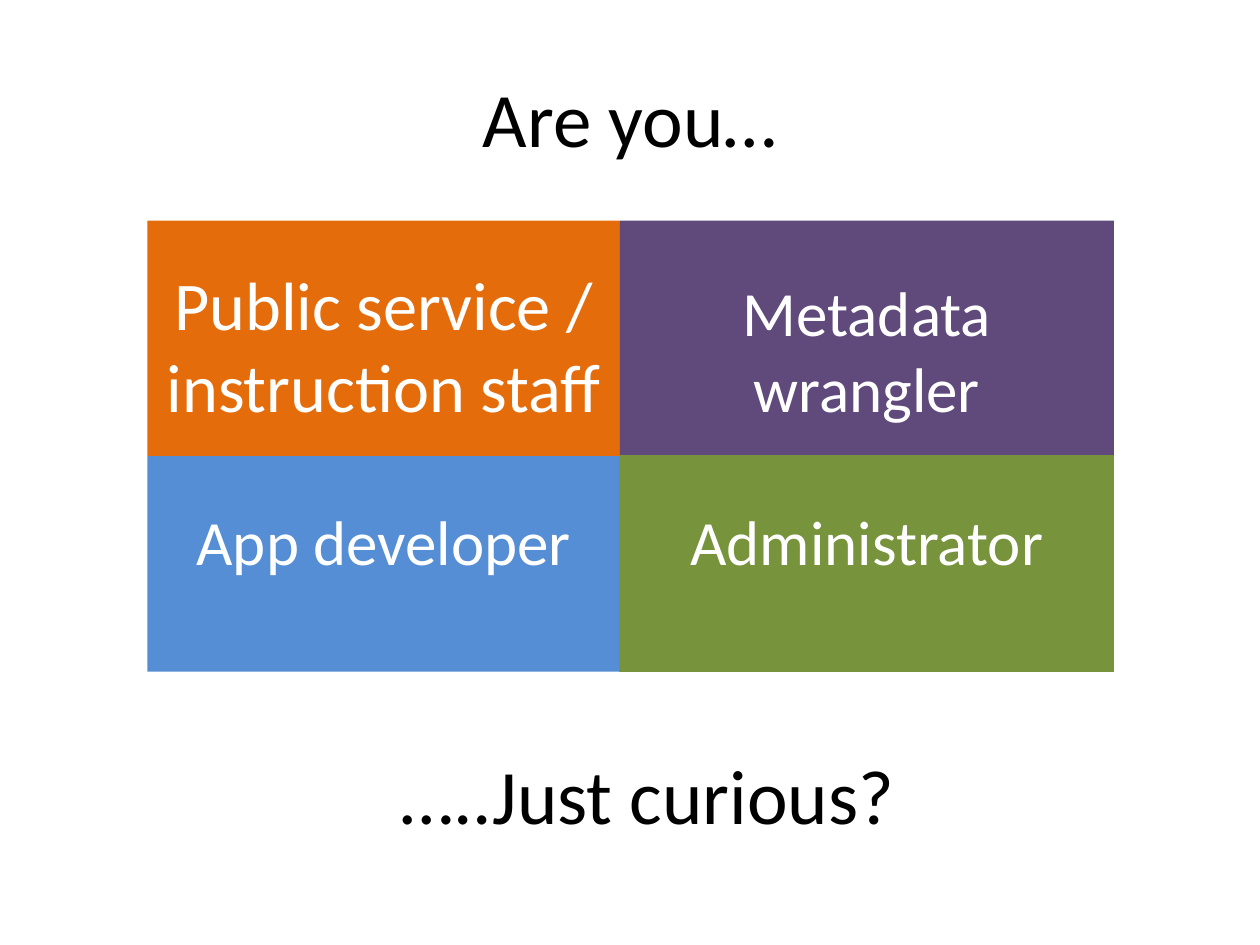
from pptx import Presentation
from pptx.dml.color import RGBColor
from pptx.enum.shapes import MSO_SHAPE
from pptx.enum.text import MSO_ANCHOR, MSO_AUTO_SIZE, PP_ALIGN
from pptx.util import Inches, Pt

BLACK = RGBColor(0x00, 0x00, 0x00)
WHITE = RGBColor(0xFF, 0xFF, 0xFF)
ORANGE = RGBColor(0xE4, 0x6C, 0x0A)
PURPLE = RGBColor(0x60, 0x4A, 0x7B)
BLUE = RGBColor(0x55, 0x8E, 0xD5)
GREEN = RGBColor(0x77, 0x93, 0x3C)

TITLE = "Are you…"
CLOSING = "…..Just curious?"
# Roles in reading order: text, fill, font size, top inset
ROLES = [
    ("Public service / instruction staff", ORANGE, 39, 0.33),
    ("Metadata wrangler", PURPLE, 36, 0.42),
    ("App developer", BLUE, 36, 0.37),
    ("Administrator", GREEN, 36, 0.37),
]
GRID_LEFT, GRID_TOP = 1.17, 1.75
COL_WIDTHS = [3.75, 3.92]
ROW_HEIGHTS = [1.87, 1.71]


def place(sp, left, top, width, height):
    box = {"left": left, "top": top, "width": width, "height": height}
    for name, value in box.items():
        setattr(sp, name, Inches(value))


def write(sp, text, size, color, anchor, inset=0.05):
    tf = sp.text_frame
    frame = {"text": text, "word_wrap": True, "auto_size": MSO_AUTO_SIZE.NONE,
             "vertical_anchor": anchor, "margin_top": Inches(inset)}
    for name, value in frame.items():
        setattr(tf, name, value)
    p = tf.paragraphs[0]
    p.alignment = PP_ALIGN.CENTER
    p.space_before = Pt(0)
    font = p.runs[0].font
    for name, value in {"name": "Calibri", "size": Pt(size)}.items():
        setattr(font, name, value)
    font.color.rgb = color


def remove_bullet(sp):
    pPr = sp.text_frame.paragraphs[0]._p.get_or_add_pPr()
    pPr.set("marL", "0")
    pPr.set("indent", "0")
    pPr.get_or_change_to_buNone() if hasattr(pPr, "get_or_change_to_buNone") else \
        pPr.append(pPr.makeelement(
            "{http://schemas.openxmlformats.org/drawingml/2006/main}buNone", {}))


prs = Presentation()
prs.slide_width, prs.slide_height = Inches(10), Inches(7.5)
s = prs.slides.add_slide(prs.slide_layouts.get_by_name("Two Content"))

title, *bodies = s.placeholders
place(title, 0.5, 0.3, 9, 1.25)
write(title, TITLE, 44, BLACK, MSO_ANCHOR.MIDDLE)

for i, (text, fill, size, inset) in enumerate(ROLES):
    row, col = divmod(i, len(COL_WIDTHS))
    box = (GRID_LEFT + sum(COL_WIDTHS[:col]), GRID_TOP + sum(ROW_HEIGHTS[:row]),
           COL_WIDTHS[col], ROW_HEIGHTS[row])
    if i < len(bodies):
        sp = bodies[i]
        place(sp, *box)
    else:
        sp = s.shapes.add_shape(MSO_SHAPE.RECTANGLE, *map(Inches, box))
        sp.shadow.inherit = False
    sp.fill.solid()
    sp.fill.fore_color.rgb = fill
    sp.line.fill.background()
    write(sp, text, size, WHITE, MSO_ANCHOR.TOP, inset)
    if sp.is_placeholder:
        remove_bullet(sp)

# The last tile alone is outlined
sp.line.color.rgb = GREEN
sp.line.width = Pt(0.75)

closing = s.shapes.add_textbox(*map(Inches, (0.64, 5.67, 9, 1.25)))
write(closing, CLOSING, 44, BLACK, MSO_ANCHOR.MIDDLE)

prs.save("out.pptx")
